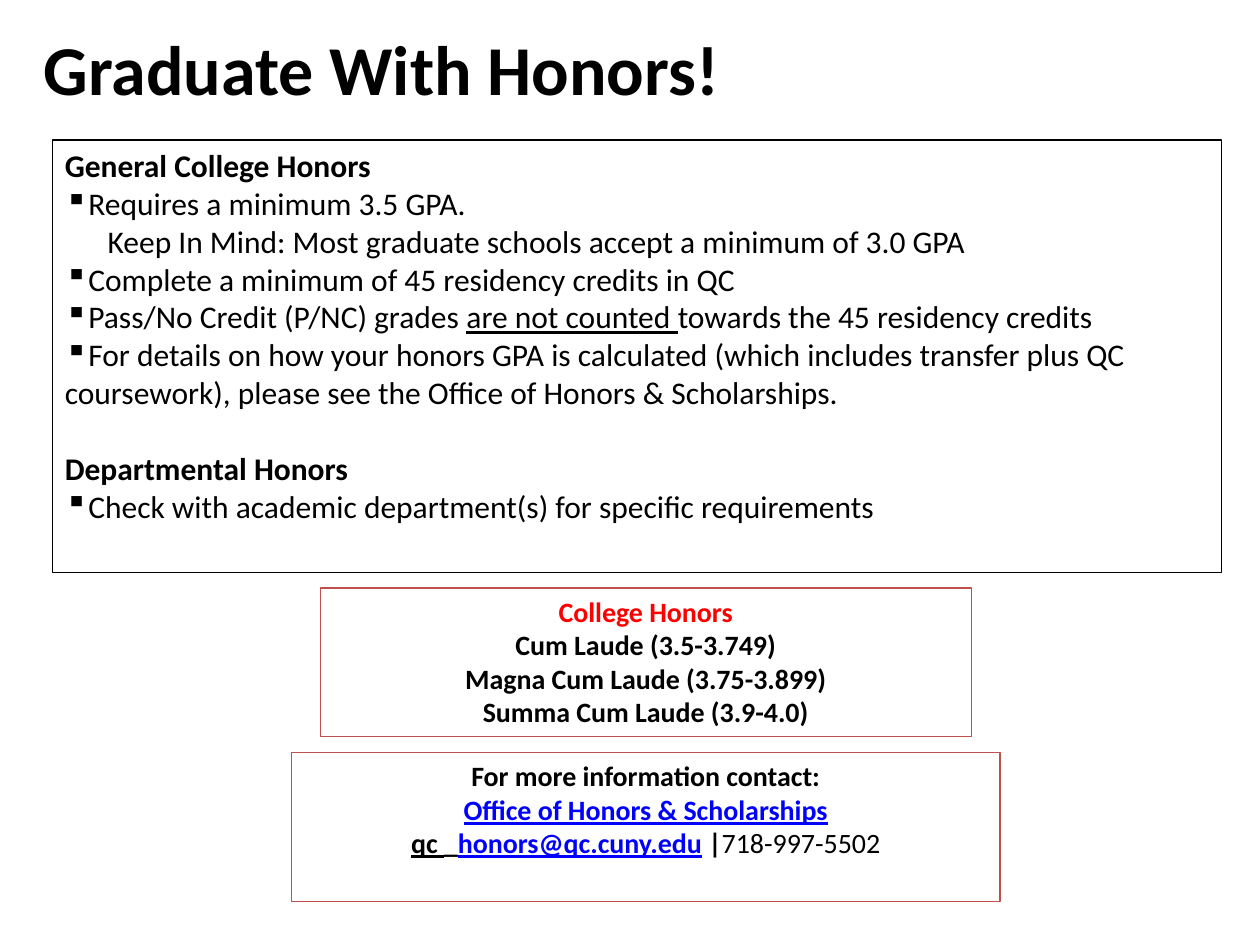
from dataclasses import dataclass

from lxml import etree
from pptx import Presentation
from pptx.dml.color import RGBColor
from pptx.enum.shapes import MSO_SHAPE
from pptx.enum.text import MSO_ANCHOR, PP_ALIGN
from pptx.oxml.ns import qn
from pptx.util import Pt

RECTANGLE = MSO_SHAPE.RECTANGLE
TOP, MIDDLE = MSO_ANCHOR.TOP, MSO_ANCHOR.MIDDLE
LEFT, CENTER = PP_ALIGN.LEFT, PP_ALIGN.CENTER


@dataclass(frozen=True)
class Theme:
    font: str = "Calibri"
    black: RGBColor = RGBColor(0, 0, 0)
    white: RGBColor = RGBColor(255, 255, 255)
    red: RGBColor = RGBColor(255, 0, 0)
    link: RGBColor = RGBColor(0, 0, 255)
    brick: RGBColor = RGBColor(0xC0, 0x50, 0x4D)
    title_size: int = 40
    body_size: int = 18
    card_size: int = 16
    border: float = 0.75
    note_indent: float = 24.5
    bullet_indent: float = -8.64
    section_gap: float = 21.7


THEME = Theme()


def add_panel(slide, box, line_color, fill_color=None):
    """Add a bordered rectangle and return its text frame."""
    shape = slide.shapes.add_shape(RECTANGLE, *map(Pt, box))
    shape.shadow.inherit = False
    if fill_color is None:
        shape.fill.background()
    else:
        shape.fill.solid()
        shape.fill.fore_color.rgb = fill_color
    shape.line.color.rgb = line_color
    shape.line.width = Pt(THEME.border)
    shape.text_frame.word_wrap = True
    shape.text_frame.vertical_anchor = TOP
    return shape.text_frame


def next_paragraph(text_frame, is_first, alignment):
    paragraph = text_frame.paragraphs[0] if is_first else text_frame.add_paragraph()
    paragraph.alignment = alignment
    return paragraph


def add_run(paragraph, text, size, color=THEME.black, bold=False, underline=False):
    run = paragraph.add_run()
    run.text = text
    font = run.font
    font.name, font.size = THEME.font, Pt(size)
    font.bold, font.underline = bold, underline
    font.color.rgb = color


def set_indent(paragraph, left, first_line=0, bullet=None):
    properties = paragraph._p.get_or_add_pPr()
    properties.set("marL", str(Pt(left)))
    properties.set("indent", str(Pt(first_line)))
    if bullet:
        color = etree.SubElement(properties, qn("a:buClr"))
        etree.SubElement(color, qn("a:srgbClr"), val=str(THEME.black))
        etree.SubElement(properties, qn("a:buChar"), char=bullet)


def add_title(slide, box, text):
    text_frame = slide.shapes.add_textbox(*map(Pt, box)).text_frame
    text_frame.word_wrap = True
    text_frame.vertical_anchor = MIDDLE
    paragraph = next_paragraph(text_frame, True, LEFT)
    add_run(paragraph, text, THEME.title_size, bold=True)


def add_requirements(slide, box, lines):
    """Each line is a kind (heading, bullet or note) and its (text, underline) parts."""
    text_frame = add_panel(slide, box, THEME.black)
    for index, (kind, parts) in enumerate(lines):
        paragraph = next_paragraph(text_frame, index == 0, LEFT)
        if kind == "bullet":
            set_indent(paragraph, 0, THEME.bullet_indent, "▪")
        elif kind == "note":
            set_indent(paragraph, THEME.note_indent)
        elif index:
            paragraph.space_before = Pt(THEME.section_gap)
        for text, underline in parts:
            add_run(paragraph, text, THEME.body_size,
                    bold=kind == "heading", underline=underline)


def add_card(slide, box, lines):
    """Each line is a list of (text, color, bold, underline) parts."""
    text_frame = add_panel(slide, box, THEME.brick, THEME.white)
    for index, parts in enumerate(lines):
        paragraph = next_paragraph(text_frame, index == 0, CENTER)
        for text, color, bold, underline in parts:
            add_run(paragraph, text, THEME.card_size, color, bold, underline)


REQUIREMENTS = [
    ("heading", [("General College Honors", False)]),
    ("bullet", [("Requires a minimum 3.5 GPA.", False)]),
    ("note", [("Keep In Mind: Most graduate schools accept a minimum of 3.0 GPA", False)]),
    ("bullet", [("Complete a minimum of 45 residency credits in QC", False)]),
    ("bullet", [("Pass/No Credit (P/NC) grades ", False),
                ("are not counted ", True),
                ("towards the 45 residency credits", False)]),
    ("bullet", [("For details on how your honors GPA is calculated (which includes "
                 "transfer plus QC coursework), please see the Office of Honors & "
                 "Scholarships.", False)]),
    ("heading", [("Departmental Honors", False)]),
    ("bullet", [("Check with academic department(s) for specific requirements", False)]),
]

HONORS_LEVELS = [
    [("College Honors", THEME.red, True, False)],
    [("Cum Laude (3.5-3.749)", THEME.black, True, False)],
    [("Magna Cum Laude (3.75-3.899)", THEME.black, True, False)],
    [("Summa Cum Laude (3.9-4.0)", THEME.black, True, False)],
]

CONTACT = [
    [("For more information contact:", THEME.black, True, False)],
    [("Office of Honors & Scholarships", THEME.link, True, True)],
    [("qc ", THEME.black, True, True),
     ("_", THEME.black, True, False),
     ("honors@qc.cuny.edu", THEME.link, True, True),
     (" |", THEME.black, True, False),
     ("718-997-5502", THEME.black, False, False)],
]


def main():
    presentation = Presentation()
    presentation.slide_width, presentation.slide_height = Pt(720), Pt(540)
    slide = presentation.slides.add_slide(presentation.slide_layouts[6])

    # Title and requirements
    add_title(slide, (18, 3.6, 414, 70), "Graduate With Honors!")
    add_requirements(slide, (30, 80, 668, 247), REQUIREMENTS)

    # Cards share one centre line
    card_center, card_height = 369, 85
    for top, width, lines in ((336, 372, HONORS_LEVELS), (430, 405, CONTACT)):
        add_card(slide, (card_center - width / 2, top, width, card_height), lines)

    presentation.save("out.pptx")


if __name__ == "__main__":
    main()
